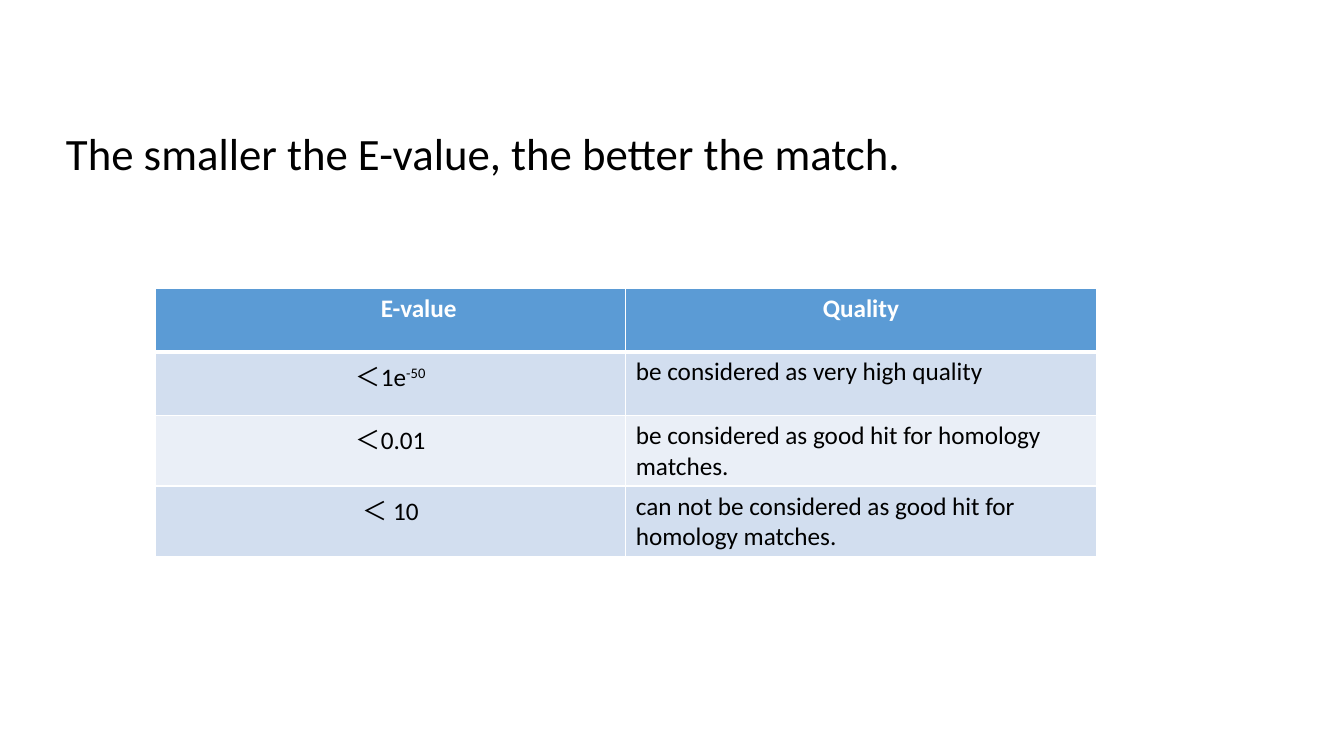
from lxml import etree
from pptx import Presentation
from pptx.dml.color import RGBColor
from pptx.enum.text import MSO_ANCHOR, PP_ALIGN
from pptx.oxml.ns import qn
from pptx.util import Pt

BOTTOM = MSO_ANCHOR.BOTTOM
LEFT, CENTER = PP_ALIGN.LEFT, PP_ALIGN.CENTER

BLACK = RGBColor(0x00, 0x00, 0x00)
WHITE = RGBColor(0xFF, 0xFF, 0xFF)
HEADER_BLUE = RGBColor(0x5B, 0x9B, 0xD5)
BAND_DARK = RGBColor(0xD2, 0xDE, 0xEF)
BAND_LIGHT = RGBColor(0xEA, 0xEF, 0xF7)

FONT = "Calibri"
HEADER_INDENT = 47.5

# Each cell is a list of runs: (text, superscript)
ROWS = [
    ([("E-value", False)], [("Quality", False)]),
    ([("＜1e", False), ("-50", True)],
     [("be considered as very high quality", False)]),
    ([("＜0.01", False)],
     [("be considered as good hit for homology matches.", False)]),
    ([("＜ 10", False)],
     [("can not be considered as good hit for homology matches.", False)]),
]


def add_run(p, text, size, color, bold=False, superscript=False):
    r = p.add_run()
    r.text = text
    r.font.name = FONT
    r.font.size = Pt(size)
    r.font.bold = bold
    r.font.color.rgb = color
    if superscript:
        r._r.get_or_add_rPr().set("baseline", "30000")


def set_borders(cell, bottom, top):
    """Draw white cell borders; bottom and top are widths in points."""
    tc_pr = cell._tc.get_or_add_tcPr()
    for side, width in (("L", 1), ("R", 1), ("T", top), ("B", bottom)):
        ln = etree.SubElement(tc_pr, qn(f"a:ln{side}"), w=str(Pt(width)))
        fill = etree.SubElement(ln, qn("a:solidFill"))
        etree.SubElement(fill, qn("a:srgbClr"), val=str(WHITE))


def add_title(slide, x, y, w, h):
    tf = slide.shapes.add_textbox(Pt(x), Pt(y), Pt(w), Pt(h)).text_frame
    tf.word_wrap = True
    tf.vertical_anchor = BOTTOM
    p = tf.paragraphs[0]
    p.alignment = CENTER
    p.line_spacing = 0.9
    add_run(p, "The smaller the E-value, the better the match.", 32, BLACK)


def add_quality_table(slide, x, y, w, h):
    table = slide.shapes.add_table(
        len(ROWS), len(ROWS[0]), Pt(x), Pt(y), Pt(w), Pt(h)).table
    for i, row in enumerate(ROWS):
        header = i == 0
        band = HEADER_BLUE if header else BAND_DARK if i % 2 else BAND_LIGHT
        for j, runs in enumerate(row):
            cell = table.cell(i, j)
            set_borders(cell, bottom=3 if header else 1, top=3 if i == 1 else 1)
            cell.fill.solid()
            cell.fill.fore_color.rgb = band
            p = cell.text_frame.paragraphs[0]
            p.alignment = CENTER if header or j == 0 else LEFT
            for text, superscript in runs:
                add_run(p, text, 18, WHITE if header else BLACK, header, superscript)
    table.cell(0, 0).margin_left = Pt(HEADER_INDENT)


def main():
    prs = Presentation()
    prs.slide_width, prs.slide_height = Pt(960), Pt(540)
    slide = prs.slides.add_slide(prs.slide_layouts[6])
    add_title(slide, 30.25, 68.5, 630, 64)
    add_quality_table(slide, 111, 206, 672, 181.5)
    prs.save("out.pptx")


if __name__ == "__main__":
    main()
